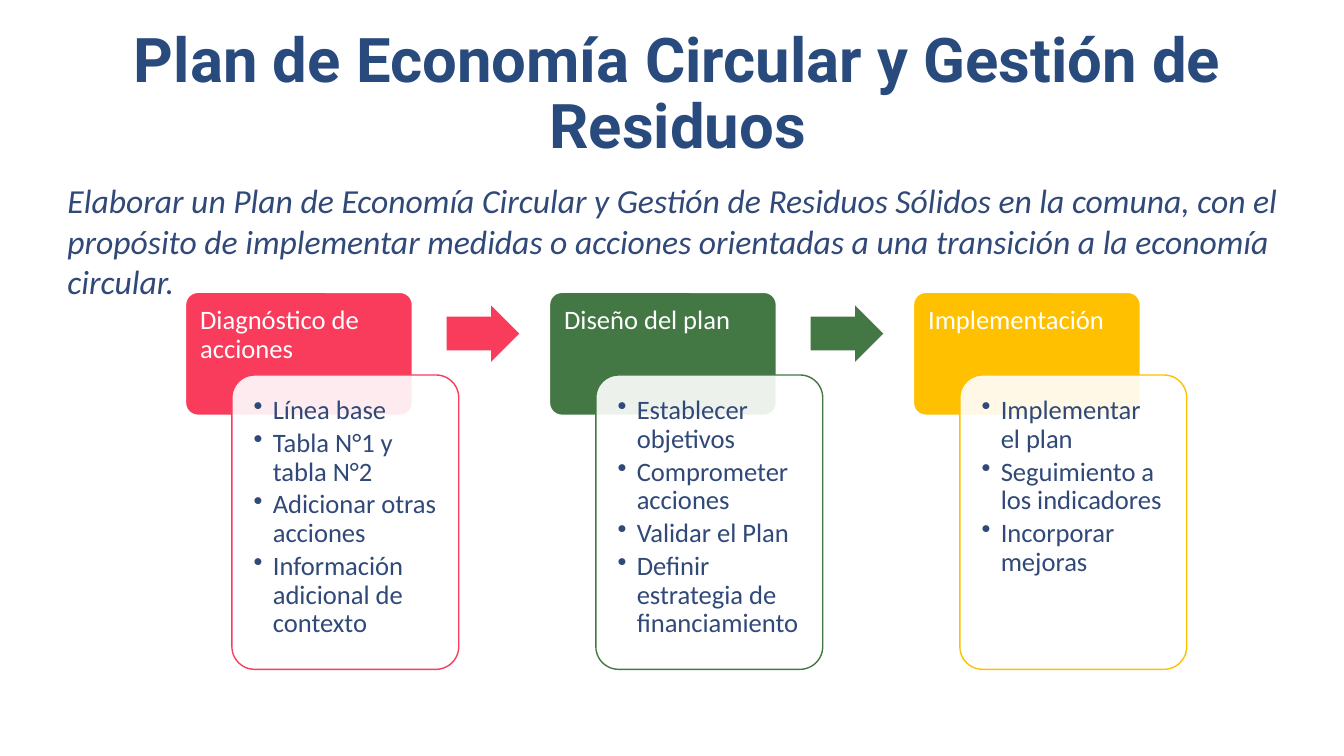
from dataclasses import dataclass
from typing import Any

from lxml import etree
from pptx import Presentation
from pptx import util as u
from pptx.dml.color import RGBColor
from pptx.enum import shapes, text
from pptx.oxml.ns import qn


@dataclass(frozen=True)
class Theme:
    title_color: str = "284A7C"
    body_color: str = "304978"
    white: str = "FFFFFF"
    red: str = "F93B5C"
    green: str = "437744"
    yellow: str = "FFC000"
    title_font: str = "Roboto"
    body_font: str = "Calibri"
    title_size: float = 44
    intro_size: float = 24
    step_size: float = 19


@dataclass(frozen=True)
class Step:
    name: str
    color: str
    tasks: tuple[str, ...]


@dataclass(frozen=True)
class Box:
    left: float
    top: float
    width: float
    height: float

    def emu(self) -> list[int]:
        return [u.Inches(v) for v in (self.left, self.top, self.width, self.height)]


THEME = Theme()
STEPS = (
    Step("Diagnóstico de acciones", THEME.red,
         ("Línea base", "Tabla N°1 y tabla N°2", "Adicionar otras acciones",
          "Información adicional de contexto")),
    Step("Diseño del plan", THEME.green,
         ("Establecer objetivos", "Comprometer acciones", "Validar el Plan",
          "Definir estrategia de financiamiento")),
    Step("Implementación", THEME.yellow,
         ("Implementar el plan", "Seguimiento a los indicadores", "Incorporar mejoras")),
)
FIRST_LEFT, STEP_PITCH = 1.84, 3.61


def set_attrs(obj: Any, values: dict[str, Any]) -> None:
    for name, value in values.items():
        setattr(obj, name, value)


def set_frame(tf: Any, margins: tuple[float, ...], anchor: Any) -> None:
    sides = ("margin_left", "margin_top", "margin_right", "margin_bottom")
    set_attrs(tf, {"word_wrap": True, "auto_size": text.MSO_AUTO_SIZE.NONE,
                   "vertical_anchor": anchor,
                   **{side: u.Inches(m) for side, m in zip(sides, margins)}})


def write(p: Any, words: str, color: str, font: dict[str, Any],
          layout: dict[str, Any]) -> None:
    set_attrs(p, layout)
    r = p.add_run()
    r.text = words
    set_attrs(r.font, font)
    r.font.color.rgb = RGBColor.from_string(color)


def add_bullet(p: Any) -> None:
    pPr = p._p.get_or_add_pPr()
    pPr.set("marL", str(u.Inches(0.19)))
    pPr.set("indent", str(u.Inches(-0.19)))
    etree.SubElement(pPr, qn("a:buChar")).set("char", "•")


def add_block(slide: Any, kind: Any, box: Box, fill: str, line: str | None,
              adjust: tuple[float, ...]) -> Any:
    sp = slide.shapes.add_shape(kind, *box.emu())
    sp.shadow.inherit = False
    for i, value in enumerate(adjust):
        sp.adjustments[i] = value
    sp.fill.solid()
    sp.fill.fore_color.rgb = RGBColor.from_string(fill)
    if line:
        sp.line.color.rgb = RGBColor.from_string(line)
        sp.line.width = u.Pt(1)
    else:
        sp.line.fill.background()
    return sp


def add_step(slide: Any, step: Step, left: float, has_next: bool) -> None:
    font = {"name": THEME.body_font, "size": u.Pt(THEME.step_size)}
    layout = {"alignment": text.PP_ALIGN.LEFT, "line_spacing": 0.9}
    rounded = shapes.MSO_SHAPE.ROUNDED_RECTANGLE

    # Coloured header
    header = add_block(slide, rounded, Box(left, 2.9, 2.25, 1.22),
                       step.color, THEME.white, (0.1,))
    set_frame(header.text_frame, (0.11, 0.11, 0.11, 0.08), text.MSO_ANCHOR.TOP)
    write(header.text_frame.paragraphs[0], step.name, THEME.white, font, layout)

    # Translucent task card
    card = add_block(slide, rounded, Box(left + 0.46, 3.72, 2.25, 2.92),
                     THEME.white, step.color, (0.1,))
    tint = card._element.spPr.find(qn("a:solidFill")).find(qn("a:srgbClr"))
    etree.SubElement(tint, qn("a:alpha")).set("val", "90000")
    tf = card.text_frame
    set_frame(tf, (0.15,) * 4, text.MSO_ANCHOR.TOP)
    for i, task in enumerate(step.tasks):
        p = tf.add_paragraph() if i else tf.paragraphs[0]
        add_bullet(p)
        write(p, task, THEME.body_color, font, {**layout, "space_after": u.Pt(2.85)})

    # Arrow to the next step
    if has_next:
        add_block(slide, shapes.MSO_SHAPE.RIGHT_ARROW, Box(left + 2.59, 3.03, 0.72, 0.56),
                  step.color, None, (0.6, 0.5))


def main() -> None:
    prs = Presentation()
    prs.slide_width, prs.slide_height = u.Inches(13.33), u.Inches(7.5)
    slide = prs.slides.add_slide(prs.slide_layouts[5])

    # Title
    title = slide.shapes.title
    box = Box(1.01, 0.24, 11.43, 1.42)
    set_attrs(title, dict(zip(("left", "top", "width", "height"), box.emu())))
    set_frame(title.text_frame, (0.09, 0.04, 0.09, 0.04), text.MSO_ANCHOR.MIDDLE)
    write(title.text_frame.paragraphs[0],
          "Plan de Economía Circular y Gestión de Residuos", THEME.title_color,
          {"name": THEME.title_font, "size": u.Pt(THEME.title_size), "bold": True},
          {"alignment": text.PP_ALIGN.CENTER, "line_spacing": 0.9})

    # Introduction
    intro = slide.shapes.add_textbox(*Box(0.57, 1.74, 12.32, 1.31).emu())
    set_frame(intro.text_frame, (0.1, 0.05, 0.1, 0.05), text.MSO_ANCHOR.TOP)
    write(intro.text_frame.paragraphs[0],
          "Elaborar un Plan de Economía Circular y Gestión de Residuos Sólidos en la "
          "comuna, con el propósito de implementar medidas o acciones orientadas a una "
          "transición a la economía circular.", THEME.body_color,
          {"name": THEME.body_font, "size": u.Pt(THEME.intro_size), "italic": True},
          {"alignment": text.PP_ALIGN.LEFT})

    # Process steps
    for i, step in enumerate(STEPS):
        add_step(slide, step, FIRST_LEFT + i * STEP_PITCH, i < len(STEPS) - 1)

    prs.save("out.pptx")


if __name__ == "__main__":
    main()
